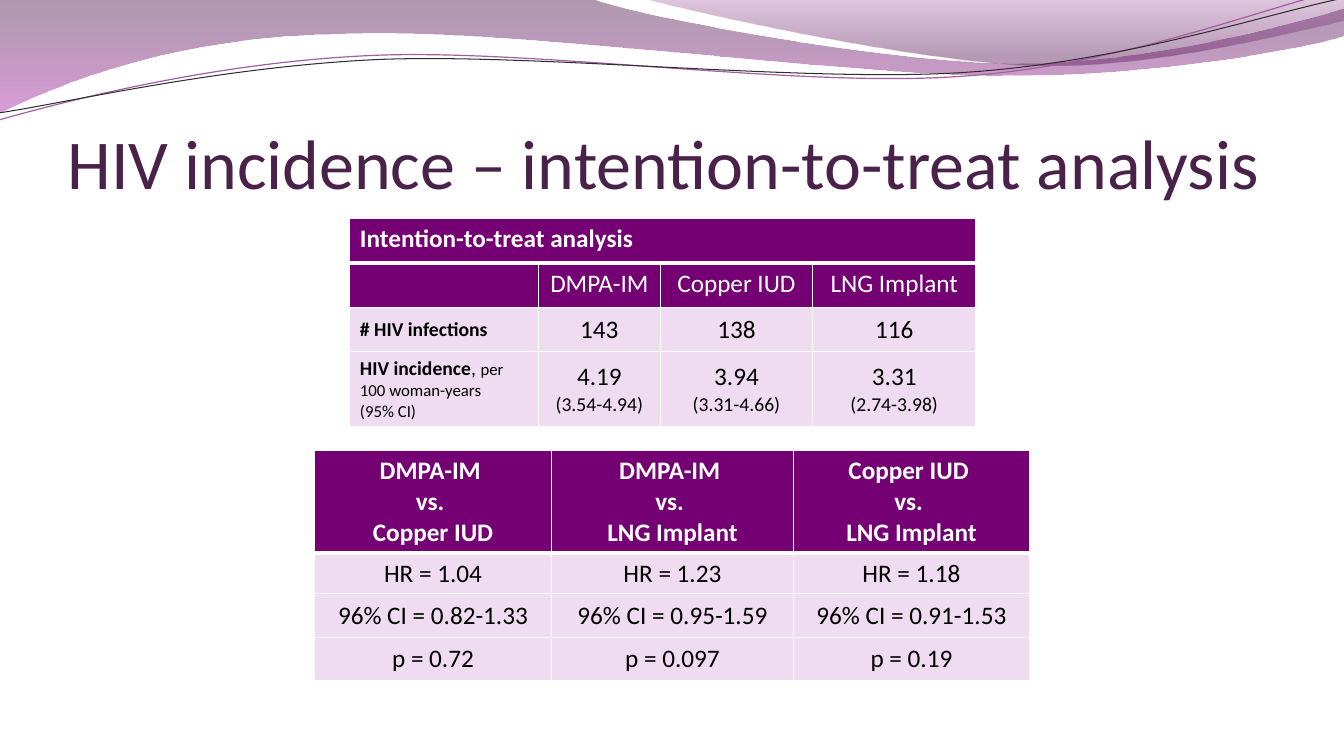
from lxml import etree
from pptx import Presentation
from pptx.dml.color import RGBColor
from pptx.enum.text import MSO_ANCHOR, PP_ALIGN
from pptx.oxml.ns import qn
from pptx.util import Inches, Pt

LEFT, CENTER = PP_ALIGN.LEFT, PP_ALIGN.CENTER
TOP, MIDDLE, BOTTOM = MSO_ANCHOR.TOP, MSO_ANCHOR.MIDDLE, MSO_ANCHOR.BOTTOM
FONT = "Calibri"
PURPLE, PALE, WHITE, BLACK, PLUM = "740074", "F0DCF0", "FFFFFF", "000000", "4A2249"
UNITS_PER_INCH = 1000

RIBBONS = [
    ((0, 0), [(5.87, -0.01), (6.34, 0.17, 8.84, 0.63, 10.11, 0.63),
              (11.37, 0.63, 12.77, 0.26, 13.33, 0.09), (13.34, 0.36),
              (13.11, 0.44, 11.59, 0.76, 9.94, 0.75), (8.29, 0.75, 5.09, 0.28, 3.43, 0.34),
              (1.72, 0.36, 0.61, 0.83, -0.02, 1.13)],
     [(0, "4D1E4C", 45), (1, "BC4BBA", 55)]),
    ((6.38, -0.01), [(6.79, 0.11, 9.09, 0.62, 10.25, 0.65),
                     (11.4, 0.69, 12.82, 0.32, 13.33, 0.21), (13.33, 0)],
     [(0, "924591", 30), (0.8, "611F5F", 45)]),
]
STRANDS = [
    ((-0.01, 1.19), [(0.63, 1.01, 2.1, 0.62, 3.69, 0.55), (5.27, 0.48, 7.89, 0.87, 9.49, 0.76),
                     (11.1, 0.66, 12.51, 0.08, 13.3, -0.1)], "A35DA2", 0.85),
    ((-0.01, 1.12), [(0.62, 1.03, 2.18, 0.66, 3.77, 0.59), (5.37, 0.53, 7.96, 0.82, 9.55, 0.72),
                     (11.14, 0.62, 12.55, 0.14, 13.33, -0.02)], "2F2F2F", 0.75),
]


def incidence_cell(rate, interval):
    """Return the paragraphs of a rate with its confidence interval."""
    return [[(rate, 18, False)], [(interval, 14, False)]]


INCIDENCE_ROWS = [
    [[[("Intention-to-treat analysis", 18, True)]], "", "", ""],
    ["", "DMPA-IM", "Copper IUD", "LNG Implant"],
    [[[("# HIV infections", 14, True)]], "143", "138", "116"],
    [[[("HIV incidence", 14, True), (", ", 14, False), ("per 100 woman-years", 12, False)],
      [("(95% CI)", 12, False)]],
     incidence_cell("4.19", "(3.54-4.94)"), incidence_cell("3.94", "(3.31-4.66)"),
     incidence_cell("3.31", "(2.74-3.98)")],
]
COMPARED = [("DMPA-IM ", "Copper IUD"), ("DMPA-IM ", "LNG Implant"), ("Copper IUD ", "LNG Implant")]
HAZARD_ROWS = [
    [[[(line, 18, True)] for line in (first, "vs. ", second)] for first, second in COMPARED],
    ["HR = 1.04", "HR = 1.23", "HR = 1.18"],
    ["96% CI = 0.82-1.33", "96% CI = 0.95-1.59", "96% CI = 0.91-1.53"],
    ["p = 0.72", "p = 0.097", "p = 0.19"],
]


def rgb(hex_color):
    """Turn a hex string into a colour."""
    return RGBColor.from_string(hex_color)


def set_format(target, values):
    """Set each named attribute on the target."""
    for name, value in values.items():
        setattr(target, name, value)


def add_curve(slide, box, start, segments, close):
    """Add an outline of straight and cubic segments from the corner of the box."""
    points = [start] + [segment[i:i + 2] for segment in segments for i in range(0, len(segment), 2)]
    units = [(round(x * UNITS_PER_INCH), round(y * UNITS_PER_INCH)) for x, y in points]
    builder = slide.shapes.build_freeform(*units[0], scale=Inches(1) / UNITS_PER_INCH)
    builder.add_line_segments(units[1:], close=close)
    curve = builder.convert_to_shape(Inches(box[0]), Inches(box[1]))
    curve.shadow.inherit = False
    steps = iter(list(curve.element.iter(qn("a:lnTo"))))
    for segment in segments:
        step = next(steps)
        if len(segment) == 6:
            step.addprevious(etree.Element(qn("a:cubicBezTo")))
            bezier = step.getprevious()
            for control in (step, next(steps), next(steps)):
                bezier.append(control[0])
                control.getparent().remove(control)
    return curve


def add_waves(slide, box):
    """Draw the ribbons and thin strands across the top."""
    for start, segments, stops in RIBBONS:
        ribbon = add_curve(slide, box, start, segments, True)
        ribbon.line.fill.background()
        ribbon.fill.gradient()
        ribbon.fill.gradient_angle = 270
        for stop, (position, color, _) in zip(ribbon.fill.gradient_stops, stops):
            stop.position = position
            stop.color.rgb = rgb(color)
        tints = ribbon.element.spPr.iter(qn("a:srgbClr"))
        for tint, (_, _, opacity) in zip(tints, stops):
            etree.SubElement(tint, qn("a:alpha"), val=str(opacity * 1000))
    for start, segments, color, width in STRANDS:
        strand = add_curve(slide, box, start, segments, False)
        strand.fill.background()
        strand.line.color.rgb = rgb(color)
        strand.line.width = Pt(width)


def add_title(slide, box, text):
    """Place and format the title."""
    title = slide.shapes.title
    set_format(title, dict(zip(("left", "top", "width", "height"), map(Inches, box))))
    frame = title.text_frame
    set_format(frame, {"text": text, "word_wrap": True, "vertical_anchor": BOTTOM,
                       "margin_left": 0, "margin_top": Inches(0.05),
                       "margin_right": 0, "margin_bottom": 0})
    paragraph = frame.paragraphs[0]
    paragraph.alignment = LEFT
    set_format(paragraph.runs[0].font, {"name": FONT, "size": Pt(50), "bold": False})
    paragraph.runs[0].font.color.rgb = rgb(PLUM)


def add_borders(cell, row):
    """Rule the cell in white, thicker below the top row."""
    widths = {"a:lnL": 1, "a:lnR": 1, "a:lnT": 3 if row == 1 else 1, "a:lnB": 3 if row == 0 else 1}
    properties = cell._tc.get_or_add_tcPr()
    for tag, width in widths.items():
        border = etree.SubElement(properties, qn(tag), w=str(Pt(width)))
        solid = etree.SubElement(border, qn("a:solidFill"))
        etree.SubElement(solid, qn("a:srgbClr"), val=WHITE)


def fill_cell(cell, content, color, alignment):
    """Write the paragraphs of one cell."""
    lines = [[(content, 18, False)]] if isinstance(content, str) else content
    frame = cell.text_frame
    for index, line in enumerate(lines):
        paragraph = frame.add_paragraph() if index else frame.paragraphs[0]
        paragraph.alignment = alignment
        for text, size, bold in line:
            if text:
                run = paragraph.add_run()
                run.text = text
                set_format(run.font, {"name": FONT, "size": Pt(size), "bold": bold})
                run.font.color.rgb = rgb(color)


def add_results(slide, box, rows, widths, heights, header_rows, label_columns):
    """Add a table with purple header rows and pale body rows."""
    table = slide.shapes.add_table(len(rows), len(widths), *map(Inches, box)).table
    for column, width in zip(table.columns, widths):
        column.width = Inches(width)
    for table_row, height in zip(table.rows, heights):
        table_row.height = Inches(height)
    for row, contents in enumerate(rows):
        header = row < header_rows
        for column, content in enumerate(contents):
            cell = table.cell(row, column)
            add_borders(cell, row)
            cell.fill.solid()
            cell.fill.fore_color.rgb = rgb(PURPLE if header else PALE)
            cell.vertical_anchor = TOP if header else MIDDLE
            fill_cell(cell, content, WHITE if header else BLACK,
                      LEFT if column < label_columns else CENTER)
    return table


def main():
    """Build and save the slide."""
    deck = Presentation()
    set_format(deck, {"slide_width": Inches(13.33), "slide_height": Inches(7.5)})
    slide = deck.slides.add_slide(deck.slide_layouts[5])
    add_waves(slide, (0, 0))
    add_title(slide, (0.67, 0.77, 12, 1.25), "HIV incidence – intention-to-treat analysis")
    add_results(slide, (3.12, 4.47, 7.1, 2.26), HAZARD_ROWS,
                (2.35, 2.4, 2.34), (0.74, 0.33, 0.43, 0.43), 1, 0)
    incidence = add_results(slide, (3.47, 2.17, 6.21, 2.07), INCIDENCE_ROWS,
                            (1.87, 1.21, 1.51, 1.62), (0.44, 0.44, 0.44, 0.58), 2, 1)
    incidence.cell(0, 0).merge(incidence.cell(0, 3))
    deck.save("out.pptx")


if __name__ == "__main__":
    main()
